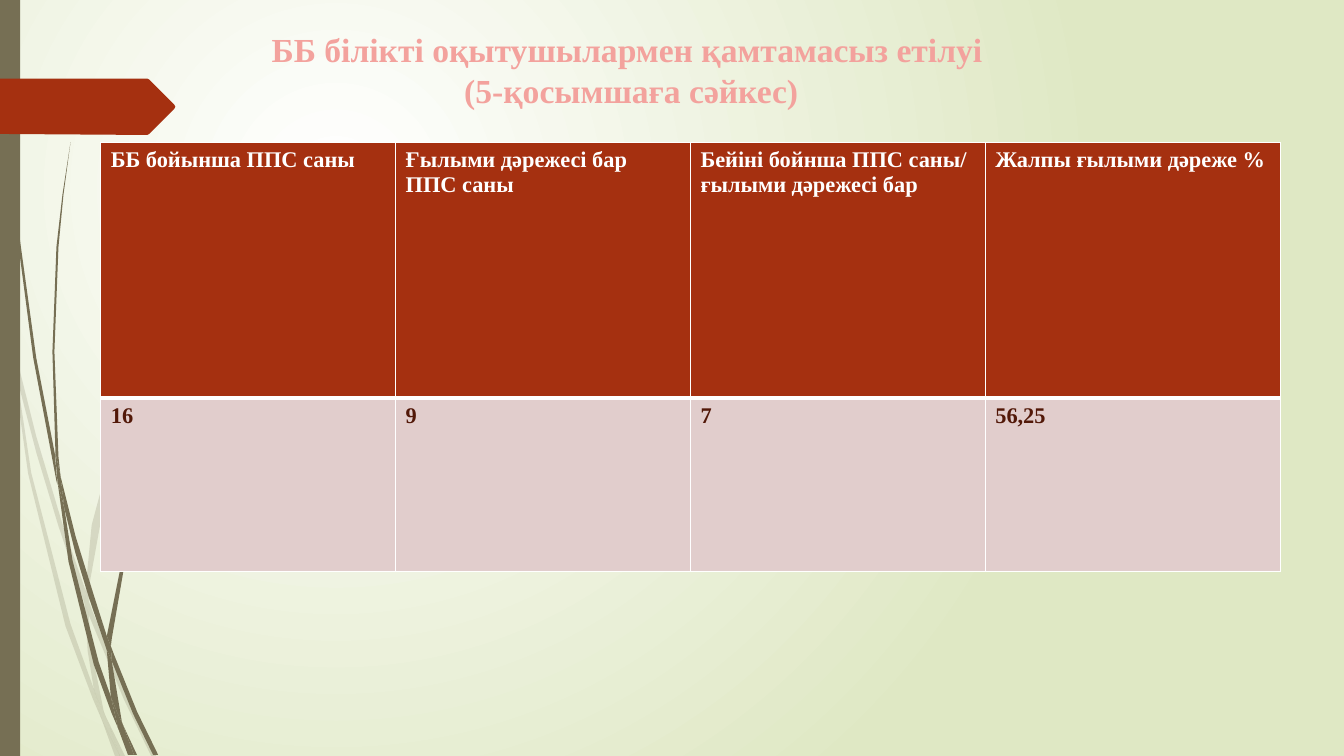
from dataclasses import dataclass

from lxml.etree import SubElement
from pptx import Presentation
from pptx.dml.color import RGBColor
from pptx.enum.shapes import MSO_SHAPE
from pptx.enum.text import PP_ALIGN
from pptx.oxml.ns import qn
from pptx.util import Cm, Pt


@dataclass(frozen=True)
class Theme:
    font: str = "Times New Roman"
    title_size: int = 24
    table_size: int = 16
    white: str = "FFFFFF"
    meadow: str = "DFE8C4"
    stem: str = "766F54"
    accent: str = "A53010"
    title: str = "F3A29D"
    body_text: str = "521808"
    body_fill: str = "E1CDCC"
    pale_alpha: int = 20000
    thin: int = 1
    thick: int = 3


THEME = Theme()
GRID = Cm(2.54)

PALE_STEMS = [
    [(0.58, 5.22), (0.84, 5.99), (0.85, 5.86), (0.62, 5.2), (0.36, 4.33),
     (0.14, 3.45), (0.17, 3.76), (0.36, 4.49)],
    [(0.92, 6.07), (0.88, 5.96), (0.88, 6.1), (1.23, 6.94), (1.5, 7.5),
     (1.55, 7.5), (1.27, 6.92)],
    [(1.19, 7.5), (1.24, 7.5), (1.05, 7.11)],
    [(0.93, 6.83), (0.7, 6.19), (0.31, 4.69), (0.17, 3.76), (0.11, 3.5),
     (0.28, 4.7), (0.65, 6.21), (0.92, 6.93), (1.01, 7.14), (0.99, 7.07)],
    [(0.84, 5.99), (0.87, 6.46), (0.93, 6.83), (0.96, 6.92), (1.05, 7.11),
     (1.03, 7.06), (0.91, 6.46), (0.88, 6.1), (0.88, 6.08)],
    [(0.88, 5.84), (1.1, 4.62), (1.6, 3.49), (2.29, 2.45), (2.68, 1.98),
     (2.9, 1.75), (3.12, 1.54), (3.12, 1.53), (2.89, 1.75), (2.68, 1.97),
     (2.28, 2.44), (1.58, 3.48), (1.07, 4.61), (0.91, 5.21), (0.85, 5.84),
     (0.85, 5.86), (0.88, 5.96)],
    [(1.01, 7.14), (1.14, 7.5), (1.19, 7.5)],
    [(0.88, 6.08), (0.88, 6.1), (0.88, 5.96), (0.85, 5.86), (0.84, 5.99)],
    [(0.96, 6.92), (0.93, 6.83), (0.99, 7.07), (1.01, 7.14), (1.19, 7.5),
     (1.05, 7.11)],
]

DARK_STEMS = [
    [(0.07, 1.1), (0.17, 2.33), (0.33, 3.55), (0.56, 4.77), (0.57, 4.81),
     (0.55, 4.57), (0.55, 4.53), (0.36, 3.55), (0.19, 2.32), (0.08, 1.09),
     (0.05, 0.48), (0.04, 0), (0.03, 0), (0.04, 0.48)],
    [(0.88, 5.92), (1.06, 6.45), (1.06, 6.31), (0.93, 5.9), (0.75, 5.32),
     (0.6, 4.72), (0.64, 5.05), (0.75, 5.49)],
    [(1.13, 6.49), (1.1, 6.41), (1.11, 6.56), (1.32, 7.08), (1.52, 7.49),
     (1.57, 7.49), (1.36, 7.06)],
    [(1.1, 6.91), (0.98, 6.57), (0.72, 5.56), (0.64, 5.05), (0.57, 4.77),
     (0.68, 5.57), (0.93, 6.59), (1.11, 7.08), (1.17, 7.22), (1.16, 7.17)],
    [(0.6, 4.72), (0.58, 4.53), (0.54, 3.49), (0.58, 2.45), (0.63, 1.93),
     (0.7, 1.41), (0.62, 1.93), (0.56, 2.45), (0.52, 3.49), (0.55, 4.49)],
    [(1.33, 7.49), (1.36, 7.49), (1.22, 7.19)],
    [(0.57, 4.77), (0.64, 5.05), (0.6, 4.72), (0.55, 4.49), (0.55, 4.53)],
    [(1.11, 6.33), (1.25, 5.52), (1.58, 4.76), (2.05, 4.06), (2.31, 3.74),
     (2.45, 3.59), (2.61, 3.44), (2.6, 3.44), (2.45, 3.58), (2.31, 3.73),
     (2.04, 4.05), (1.56, 4.74), (1.22, 5.51), (1.06, 6.31), (1.1, 6.41)],
    [(1.17, 7.22), (1.27, 7.49), (1.31, 7.49)],
    [(1.06, 6.45), (1.1, 6.91), (1.16, 7.06), (1.22, 7.19), (1.21, 7.16),
     (1.11, 6.56), (1.09, 6.51)],
    [(1.06, 6.45), (1.09, 6.51), (1.11, 6.56), (1.1, 6.41), (1.06, 6.31)],
    [(1.16, 7.06), (1.1, 6.91), (1.16, 7.17), (1.17, 7.22), (1.3, 7.49),
     (1.33, 7.49), (1.22, 7.19)],
]

TAG = [(0, 0), (1.46, 0), (1.48, 0.01), (1.73, 0.26), (1.74, 0.28),
       (1.73, 0.3), (1.48, 0.55), (1.46, 0.56), (0, 0.55)]

TITLE_LINES = ["ББ білікті оқытушылармен қамтамасыз етілуі ", "(5-қосымшаға сәйкес)"]

STAFF = [
    ["ББ бойынша ППС саны", "Ғылыми дәрежесі бар ППС саны",
     "Бейіні бойнша ППС саны/ ғылыми дәрежесі бар", "Жалпы ғылыми дәреже %"],
    ["16", "9", "7", "56,25"],
]


def rgb(color):
    return RGBColor.from_string(color)


def paint(sp, color, alpha=None):
    sp.shadow.inherit = False
    sp.fill.solid()
    sp.fill.fore_color.rgb = rgb(color)
    sp.line.fill.background()
    if alpha:
        clr = sp.fill._xPr.find(".//" + qn("a:srgbClr"))
        SubElement(clr, qn("a:alpha")).set("val", str(alpha))


def add_run(p, text, size, color):
    r = p.add_run()
    r.text = text
    r.font.name = THEME.font
    r.font.size = Pt(size)
    r.font.bold = True
    r.font.color.rgb = rgb(color)


def add_outline(shapes, points, left, top, color, alpha=None):
    start, *rest = [(x * GRID, y * GRID) for x, y in points]
    builder = shapes.build_freeform(*start)
    builder.add_line_segments(rest, close=True)
    paint(builder.convert_to_shape(left, top), color, alpha)


def add_background(s):
    fill = s.background.fill
    fill.gradient()
    for stop, color in zip(fill.gradient_stops, (THEME.white, THEME.meadow)):
        stop.color.rgb = rgb(color)
    grad = s._element.find(".//" + qn("a:gradFill"))
    grad.remove(grad.find(qn("a:lin")))
    radial = SubElement(grad, qn("a:path"))
    radial.set("path", "circle")
    focus = SubElement(radial, qn("a:fillToRect"))
    for side, val in zip("ltrb", (50000, 50000, 100000, 100000)):
        focus.set(side, str(val))


def add_side_decoration(s, left, top, height):
    for stems, alpha in ((PALE_STEMS, THEME.pale_alpha), (DARK_STEMS, None)):
        group = s.shapes.add_group_shape()
        for points in stems:
            add_outline(group.shapes, points, left, top, THEME.stem, alpha)
    bar = s.shapes.add_shape(MSO_SHAPE.RECTANGLE, left, top, Cm(0.51), height)
    paint(bar, THEME.stem)
    add_outline(s.shapes, TAG, left, top + Cm(1.98), THEME.accent)


def add_title(s, left, top, width, height):
    tf = s.shapes.add_textbox(left, top, width, height).text_frame
    tf.word_wrap = True
    tf.margin_left = tf.margin_right = tf.margin_bottom = 0
    tf.margin_top = Cm(0.03)
    p = tf.paragraphs[0]
    p.alignment = PP_ALIGN.CENTER
    for i, line in enumerate(TITLE_LINES):
        if i:
            p.add_line_break()
        add_run(p, line, THEME.title_size, THEME.title)


def set_borders(cell, top, bottom):
    tcPr = cell._tc.get_or_add_tcPr()
    widths = {"L": THEME.thin, "R": THEME.thin, "T": top, "B": bottom}
    for i, (side, width) in enumerate(widths.items()):
        ln = tcPr.makeelement(qn(f"a:ln{side}"), {"w": str(Pt(width))})
        fill = SubElement(ln, qn("a:solidFill"))
        SubElement(fill, qn("a:srgbClr")).set("val", THEME.white)
        tcPr.insert(i, ln)


def add_staff_table(s, left, top, width, row_heights):
    frame = s.shapes.add_table(len(STAFF), len(STAFF[0]), left, top, width, sum(row_heights))
    table = frame.table
    styles = [(THEME.accent, THEME.white, THEME.thin, THEME.thick),
              (THEME.body_fill, THEME.body_text, THEME.thick, THEME.thin)]
    for row, height, texts, style in zip(table.rows, row_heights, STAFF, styles):
        fill, color, upper, lower = style
        row.height = height
        for cell, text in zip(row.cells, texts):
            cell.fill.solid()
            cell.fill.fore_color.rgb = rgb(fill)
            set_borders(cell, upper, lower)
            add_run(cell.text_frame.paragraphs[0], text, THEME.table_size, color)


def main():
    prs = Presentation()
    prs.slide_width, prs.slide_height = Cm(33.87), Cm(19.05)
    s = prs.slides.add_slide(prs.slide_layouts[6])
    add_background(s)
    add_side_decoration(s, 0, 0, prs.slide_height)
    add_title(s, Cm(5.13), Cm(0.71), Cm(21.56), Cm(2.08))
    add_staff_table(s, Cm(2.54), Cm(3.6), Cm(29.72), [Cm(6.43), Cm(4.37)])
    prs.save("out.pptx")


if __name__ == "__main__":
    main()
